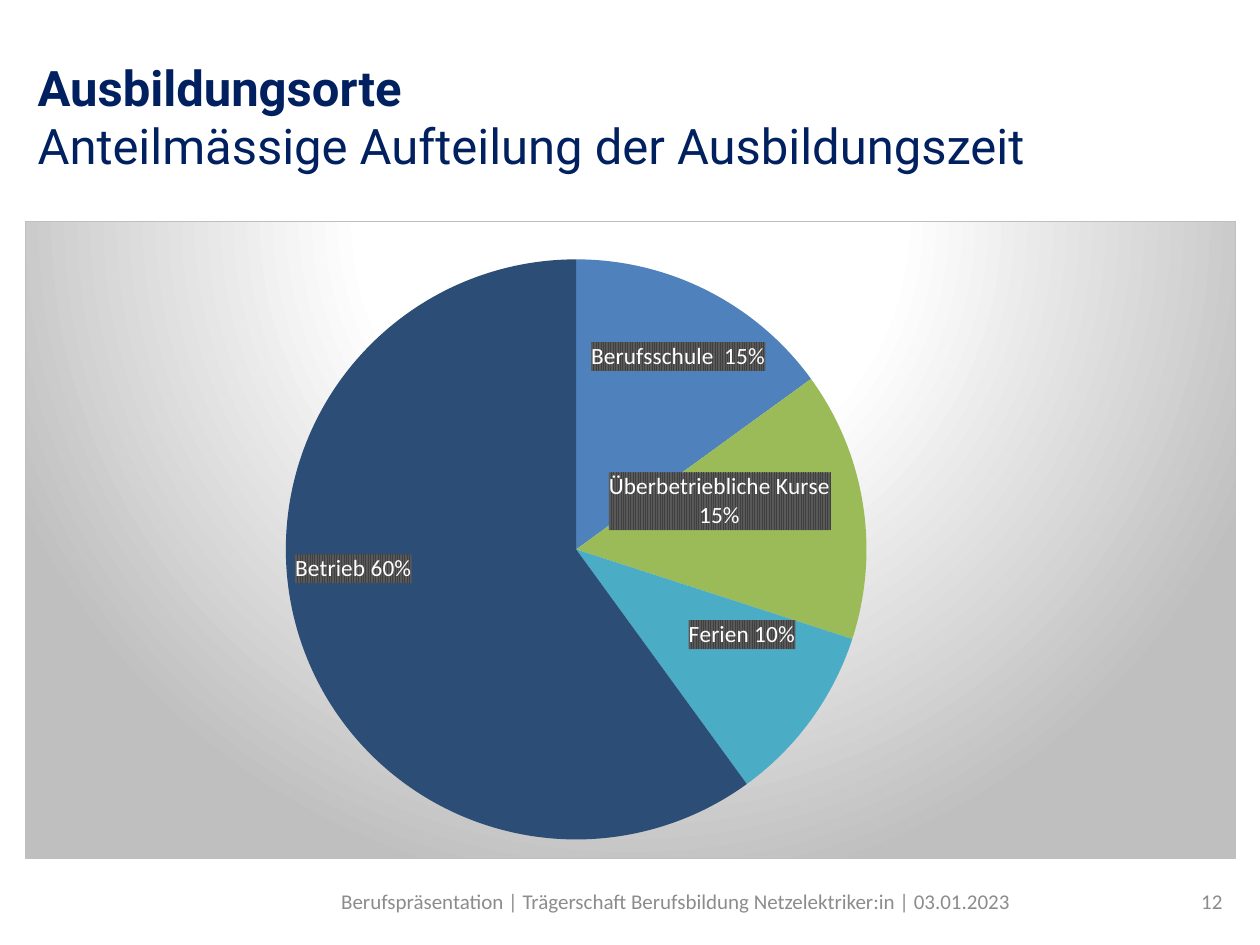
from lxml import etree
from pptx import Presentation
from pptx.chart.data import CategoryChartData
from pptx.dml.color import RGBColor
from pptx.enum.chart import XL_CHART_TYPE, XL_LABEL_POSITION
from pptx.enum.text import MSO_ANCHOR, PP_ALIGN
from pptx.oxml import parse_xml
from pptx.oxml.ns import nsdecls, qn
from pptx.util import Inches, Pt

PIE = XL_CHART_TYPE.PIE
CENTER_LABEL = XL_LABEL_POSITION.CENTER
MIDDLE = MSO_ANCHOR.MIDDLE
LEFT, CENTER, RIGHT = PP_ALIGN.LEFT, PP_ALIGN.CENTER, PP_ALIGN.RIGHT
NS = nsdecls("c", "a")


def color(value):
    return RGBColor.from_string(value)


def layout_xml(**values):
    layout = etree.Element(qn("c:layout"))
    manual = etree.SubElement(layout, qn("c:manualLayout"))
    for tag, value in values.items():
        etree.SubElement(manual, qn("c:" + tag)).set("val", str(value))
    return layout


prs = Presentation()
prs.slide_width, prs.slide_height = Inches(10), Inches(7.5)
slide = prs.slides.add_slide(prs.slide_layouts[6])

# Title and footer: place, alignment, font format, lines with their weight
title_format = {"name": "Roboto", "size": Pt(28)}
footer_format = {"name": "Calibri", "size": Pt(12)}
texts = [
    ((0.2, 0.3, 9.61, 1.24), LEFT, title_format, "002060",
     [("Ausbildungsorte", True),
      ("Anteilmässige Aufteilung der Ausbildungszeit", False)]),
    ((2.43, 6.95, 5.87, 0.4), CENTER, footer_format, "8C8C8C",
     [("Berufspräsentation | Trägerschaft Berufsbildung Netzelektriker:in"
       " | 03.01.2023", False)]),
    ((8.78, 6.95, 1.02, 0.4), RIGHT, footer_format, "8C8C8C",
     [("12", False)]),
]
for place, alignment, text_format, text_color, lines in texts:
    frame = slide.shapes.add_textbox(*map(Inches, place)).text_frame
    frame.word_wrap = True
    frame.vertical_anchor = MIDDLE
    paragraph = frame.paragraphs[0]
    paragraph.alignment = alignment
    for number, (line, bold) in enumerate(lines):
        if number:
            paragraph.add_line_break()
        run = paragraph.add_run()
        run.text = line
        for key, value in {**text_format, "bold": bold}.items():
            setattr(run.font, key, value)
        run.font.color.rgb = color(text_color)

# Training places: share, colour, label, label offset from the slice centre
places = [
    (0.15, "4F81BD", "Berufsschule  15%", 0.03, -0.1),
    (0.15, "9BBB59", "Überbetriebliche Kurse 15%", 0, -0.04),
    (0.1, "4BACC6", "Ferien 10%", 0.04, 0),
    (0.6, "2C4D75", "Betrieb 60%", -0.07, -0.04),
]
shares = CategoryChartData(number_format="0%")
shares.categories = ["1", "2", "3", "4"]
shares.add_series("Series 1", [place[0] for place in places])
chart = slide.shapes.add_chart(
    PIE, Inches(0.2), Inches(1.75), Inches(9.61), Inches(5.07), shares).chart
chart.has_legend = False
chart.has_title = False
chart.font.name = "Calibri"
chart.font.size = Pt(10)
chart.font.color.rgb = color("000000")

# Chart background: radial gradient with a thin border
chart_space = chart.element
chart_space.find(qn("c:chart")).addnext(parse_xml(
    f'<c:spPr {NS}><a:gradFill><a:gsLst>'
    '<a:gs pos="0"><a:srgbClr val="FFFFFF"/></a:gs>'
    '<a:gs pos="39000"><a:srgbClr val="FFFFFF"/></a:gs>'
    '<a:gs pos="100000"><a:srgbClr val="BFBFBF"/></a:gs></a:gsLst>'
    '<a:path path="circle">'
    '<a:fillToRect l="50000" t="-80000" r="50000" b="180000"/></a:path>'
    '</a:gradFill><a:ln w="9525"><a:solidFill><a:srgbClr val="BFBFBF"/>'
    '</a:solidFill></a:ln></c:spPr>'))

# Position of the pie inside the chart
plot_area = chart_space.find(".//" + qn("c:plotArea"))
for old_layout in plot_area.findall(qn("c:layout")):
    plot_area.remove(old_layout)
plot_area.insert(0, layout_xml(layoutTarget="inner", xMode="edge",
                               yMode="edge", x=0.21, y=0.06, w=0.49, h=0.91))

# Label defaults of the series
plot = chart.plots[0]
plot.vary_by_categories = True
series = plot.series[0]
label_defaults = {"show_value": True, "show_percentage": True,
                  "show_category_name": False, "show_legend_key": False,
                  "number_format": "0%", "number_format_is_linked": False,
                  "position": CENTER_LABEL}
for key, value in label_defaults.items():
    setattr(series.data_labels, key, value)
label_format = {"name": "Calibri", "size": Pt(13.3)}
for key, value in {**label_format, "bold": True}.items():
    setattr(series.data_labels.font, key, value)
series.data_labels.font.color.rgb = color("FFFFFF")

# Slices and their labels
for index, (share, fill, text, dx, dy) in enumerate(places):
    point = series.points[index]
    point.format.fill.solid()
    point.format.fill.fore_color.rgb = color(fill)
    point.format.line.fill.background()

    label = point.data_label
    label.position = CENTER_LABEL
    run = label.text_frame.paragraphs[0].add_run()
    run.text = text
    for key, value in {**label_format, "bold": False}.items():
        setattr(run.font, key, value)
    run.font.color.rgb = color("FFFFFF")

# Label offsets and dark striped label backgrounds
for label_xml, (*_, dx, dy) in zip(chart_space.iter(qn("c:dLbl")), places):
    label_xml.find(qn("c:idx")).addnext(layout_xml(x=dx, y=dy))
    label_xml.find(qn("c:showPercent")).set("val", "1")
    label_xml.find(qn("c:tx")).addnext(parse_xml(
        f'<c:spPr {NS}><a:pattFill prst="ltVert">'
        '<a:fgClr><a:srgbClr val="404040"/></a:fgClr>'
        '<a:bgClr><a:srgbClr val="595959"/></a:bgClr>'
        '</a:pattFill></c:spPr>'))

prs.save("out.pptx")
